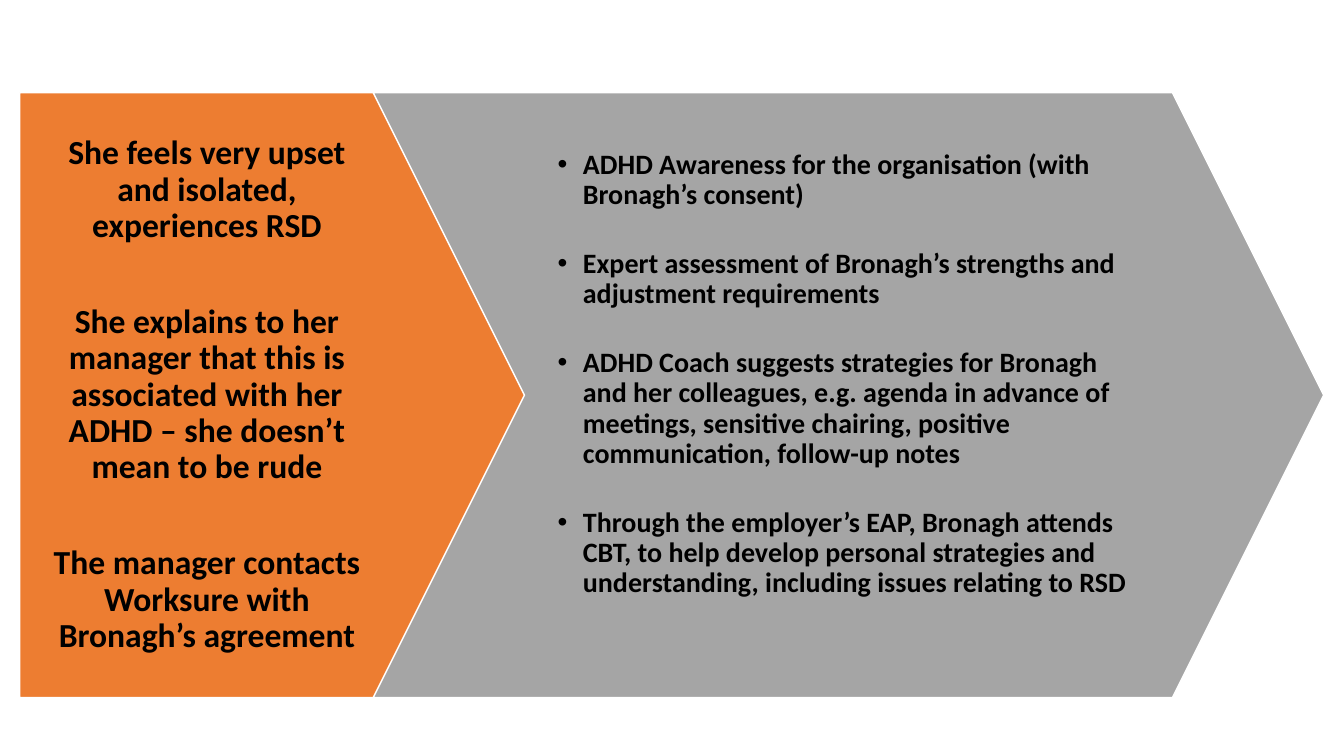
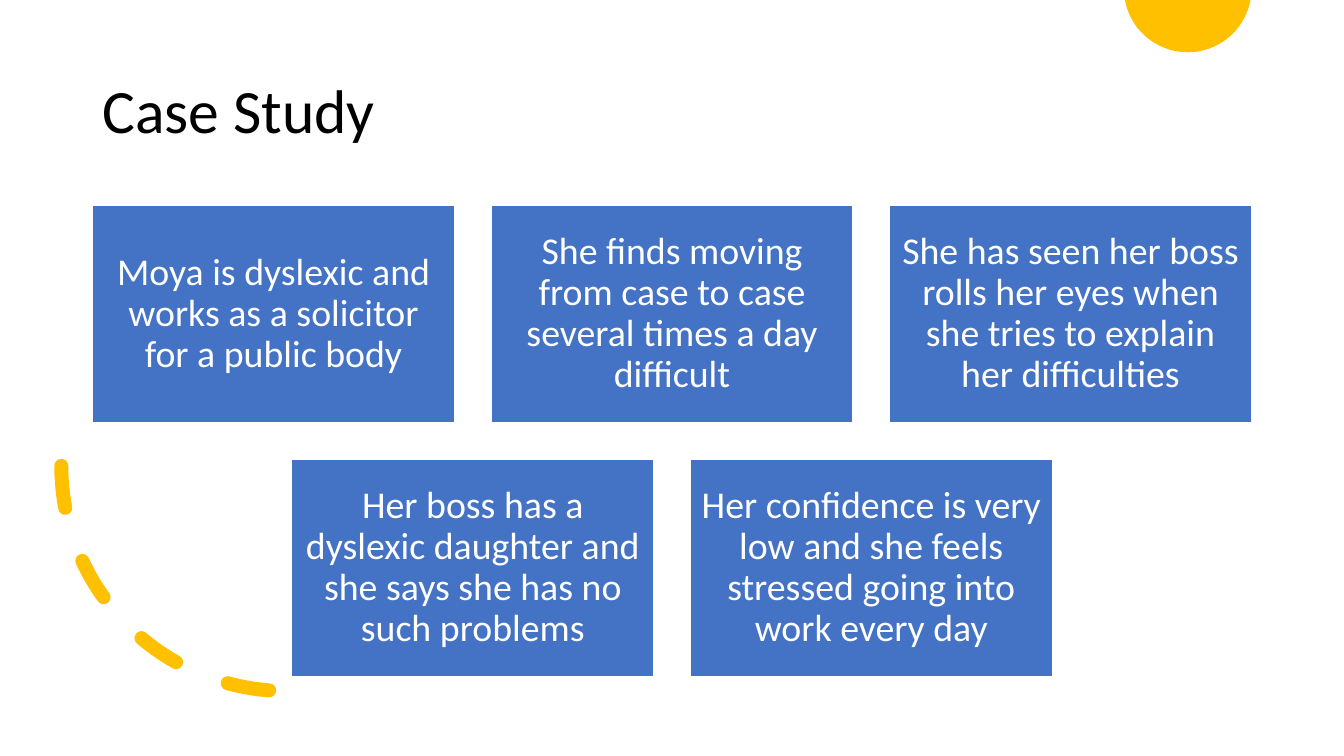
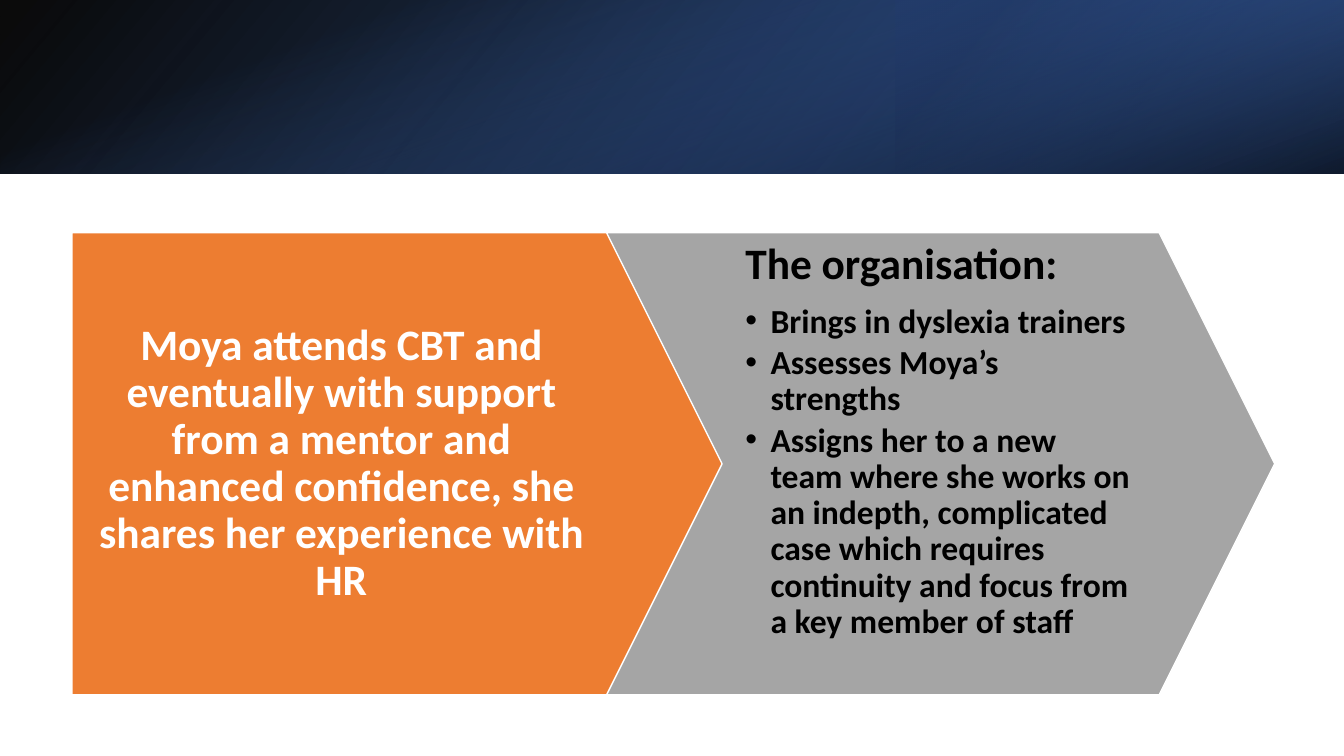
import math
import lxml.etree
import pptx
import pptx.dml.color
import pptx.enum.dml
import pptx.enum.shapes
import pptx.enum.text
import pptx.oxml.ns
import pptx.util

Kind = pptx.enum.shapes.MSO_SHAPE
Align = pptx.enum.text.PP_ALIGN
Anchor = pptx.enum.text.MSO_ANCHOR

COLS, ROWS = 80, 45
CELL = pptx.util.Inches(7.5) / ROWS
POINT = 0.25  # depth of an arrow point, as a share of the short side


class Theme:
    """Colours, font and type sizes."""
    font = "Calibri"
    black, white = "000000", "FFFFFF"
    orange, grey, blue, gold = "ED7D31", "A5A5A5", "4472C4", "FFC000"
    navy, deep = "2F5597", "203864"
    title, head, card, text, small = 44, 31, 27, 24, 20


def cells(count):
    return pptx.util.Emu(round(count * CELL))


def paint(color):
    return pptx.dml.color.RGBColor.from_string(color)


def child(node, tag, **attrs):
    return lxml.etree.SubElement(node, pptx.oxml.ns.qn(tag), **attrs)


def write(frame, text, size=Theme.text, color=Theme.black, bold=False,
          align=Align.LEFT, after=0, bullet=False):
    """Add one paragraph to a text frame."""
    para = frame.paragraphs[0]
    if para.runs:
        para = frame.add_paragraph()
    para.alignment = align
    para.line_spacing = 0.9
    para.space_before = pptx.util.Pt(0)
    para.space_after = pptx.util.Pt(after)
    props = para._p.get_or_add_pPr()
    dent = pptx.util.Inches(0.25) if bullet else 0
    props.set("marL", str(dent))
    props.set("indent", str(-dent))
    if bullet:
        child(props, "a:buChar", char="•")
    else:
        child(props, "a:buNone")
    run = para.add_run()
    run.text = text
    run.font.name = Theme.font
    run.font.size = pptx.util.Pt(size)
    run.font.bold = bold
    run.font.color.rgb = paint(color)


class Deck:
    def __init__(self):
        self.file = pptx.Presentation()
        self.file.slide_width = cells(COLS)
        self.file.slide_height = cells(ROWS)
        self.slide = None

    def page(self, layout):
        self.slide = self.file.slides.add_slide(self.file.slide_layouts[layout])

    def frame(self, shape, inset, anchor=Anchor.MIDDLE):
        """Set up a text frame; insets are left, top, right, bottom inches."""
        frame = shape.text_frame
        frame.word_wrap = True
        frame.auto_size = pptx.enum.text.MSO_AUTO_SIZE.NONE
        frame.vertical_anchor = anchor
        sides = [pptx.util.Inches(side) for side in inset]
        (frame.margin_left, frame.margin_top,
         frame.margin_right, frame.margin_bottom) = sides
        return frame

    def place(self, shape, left, top, width, height):
        shape.left, shape.top = cells(left), cells(top)
        shape.width, shape.height = cells(width), cells(height)

    def title(self, text, *box):
        shape = self.slide.shapes.title
        self.place(shape, *box)
        write(self.frame(shape, (0.1, 0.05, 0.1, 0.05)), text, size=Theme.title)

    def body(self, box, inset):
        """Bring the body placeholder to the front; drop the unused title."""
        title = self.slide.shapes.title._element
        tree = title.getparent()
        tree.remove(title)
        shape = self.slide.placeholders[1]
        self.place(shape, *box)
        tree.append(shape._element)
        return self.frame(shape, inset, Anchor.TOP)

    def shape(self, kind, box, fill=None, line=None, width=1, turn=0, flip=None):
        shape = self.slide.shapes.add_shape(kind, *map(cells, box))
        shape.shadow.inherit = False
        shape.rotation = turn
        if flip:
            shape._element.spPr.xfrm.set(flip, "1")
        if fill:
            shape.fill.solid()
            shape.fill.fore_color.rgb = paint(fill)
        else:
            shape.fill.background()
        if line:
            shape.line.color.rgb = paint(line)
            shape.line.width = pptx.util.Pt(width)
        else:
            shape.line.fill.background()
        return shape

    def arrow(self, kind, box, fill):
        shape = self.shape(kind, box, fill, Theme.white)
        shape.adjustments[0] = POINT
        return shape

    def steps(self, first, second, inset, pad):
        """Draw a pentagon and a chevron; return their two text frames."""
        lead = self.arrow(Kind.PENTAGON, first, Theme.orange)
        self.arrow(Kind.CHEVRON, second, Theme.grey)
        left, top, width, height = second
        dip = POINT * height
        body = self.body((left + dip, top, width - 2 * dip, height), pad)
        return self.frame(lead, inset), body

    def card(self, text, *box):
        shape = self.shape(Kind.RECTANGLE, box, Theme.blue, Theme.white)
        write(self.frame(shape, [0.11] * 4), text, size=Theme.card,
              color=Theme.white, align=Align.CENTER)

    def blend(self, box, angle, stops, turn=0, flip=None):
        """Rectangle with a gradient; stops are position, colour, opacity."""
        shape = self.shape(Kind.RECTANGLE, box, turn=turn, flip=flip)
        shape.fill.gradient()
        shape.fill.gradient_angle = 360 - angle
        for stop, (spot, color, alpha) in zip(shape.fill.gradient_stops, stops):
            stop.position = spot / 100
            stop.color.rgb = paint(color)
            tint = stop._gs.find(pptx.oxml.ns.qn("a:srgbClr"))
            child(tint, "a:alpha", val=str(alpha * 1000))

    def sun(self, mid, rise, radius):
        """Part of a disc that hangs below the top edge."""
        start = math.asin(rise / radius)
        sweep = math.pi - 2 * start
        dots = []
        for step in range(61):
            turn = start + sweep * step / 60
            dots.append((cells(mid + radius * math.cos(turn)),
                         cells(max(0, radius * math.sin(turn) - rise))))
        path = self.slide.shapes.build_freeform(*dots[0])
        path.add_line_segments(dots[1:])
        shape = path.convert_to_shape()
        shape.shadow.inherit = False
        shape.fill.solid()
        shape.fill.fore_color.rgb = paint(Theme.gold)
        shape.line.fill.background()

    def dashes(self, *box):
        """Dashed quarter circle with round ends."""
        arc = self.shape(Kind.ARC, box, line=Theme.gold, width=10,
                         turn=90, flip="flipV")
        arc.line.dash_style = pptx.enum.dml.MSO_LINE.DASH
        arc.line._ln.set("cap", "rnd")


def main():
    deck = Deck()

    # Slide 1: what happened and what helped
    deck.page(1)
    lead, body = deck.steps((1.17, 5.52, 32.34, 36), (22.22, 5.52, 56.57, 36),
                            (0.33, 0.07, 1.33, 0.07), (0.33, 0.57, 0.33, 0.06))
    for text in (
        "She feels very upset and isolated, experiences RSD",
        "She explains to her manager that this is associated with her ADHD "
        "– she doesn’t mean to be rude",
        "The manager contacts Worksure with Bronagh’s agreement",
    ):
        write(lead, text, bold=True, align=Align.CENTER, after=42.8)
    for text in (
        "ADHD Awareness for the organisation (with Bronagh’s consent)",
        "Expert assessment of Bronagh’s strengths and adjustment requirements",
        "ADHD Coach suggests strategies for Bronagh and her colleagues, e.g. "
        "agenda in advance of meetings, sensitive chairing, positive "
        "communication, follow-up notes",
        "Through the employer’s EAP, Bronagh attends CBT, to help develop "
        "personal strategies and understanding, including issues relating to RSD",
    ):
        write(body, text, size=Theme.small, bold=True, after=27.6, bullet=True)

    # Slide 2: case study cards, three above two
    deck.page(5)
    deck.sun(70.7, 0.69, 3.8)
    deck.title("Case Study", 5.5, 2.4, 69, 8.7)
    deck.dashes(3.65, 14.33, 26.8, 26.8)
    cards = (
        ("Moya is dyslexic and works as a solicitor for a public body",
         "She finds moving from case to case several times a day difficult",
         "She has seen her boss rolls her eyes when she tries to explain "
         "her difficulties"),
        ("Her boss has a dyslexic daughter and she says she has no such problems",
         "Her confidence is very low and she feels stressed going into work "
         "every day"),
    )
    for row, texts in enumerate(cards):
        for col, text in enumerate(texts):
            deck.card(text, 5.5 + 23.72 * (col + row / 2), 12.23 + 15.1 * row,
                      21.56, 12.93)

    # Slide 3: dark band, then the outcome
    deck.page(1)
    band = 10.33
    side = (COLS - band) / 2
    deck.blend((0, 0, COLS, band), 140,
               [(0, Theme.black, 96), (100, Theme.navy, 100)], flip="flipH")
    deck.blend((COLS * 2 / 3, 0, COLS / 3, band), 320,
               [(19, Theme.deep, 68), (100, Theme.blue, 79)],
               turn=180, flip="flipH")
    deck.blend((side, -side, band, COLS), 340,
               [(23, Theme.blue, 0), (99, Theme.black, 74)], turn=90)
    lead, body = deck.steps((4.28, 13.86, 39.77, 27.5),
                            (36.11, 13.86, 39.77, 27.5),
                            (0.23, 0.09, 0.94, 0.09), (0.23, 0.09, 0.29, 0.09))
    write(lead, "Moya attends CBT and eventually with support from a mentor and "
          "enhanced confidence, she shares her experience with HR",
          size=Theme.head, color=Theme.white, bold=True, align=Align.CENTER)
    write(body, "The organisation:", size=Theme.head, bold=True, after=11)
    for text in (
        "Brings in dyslexia trainers",
        "Assesses Moya’s strengths",
        "Assigns her to a new team where she works on an indepth, complicated "
        "case which requires continuity and focus from a key member of staff",
    ):
        write(body, text, bold=True, after=3.6, bullet=True)

    deck.file.save("out.pptx")


if __name__ == "__main__":
    main()
